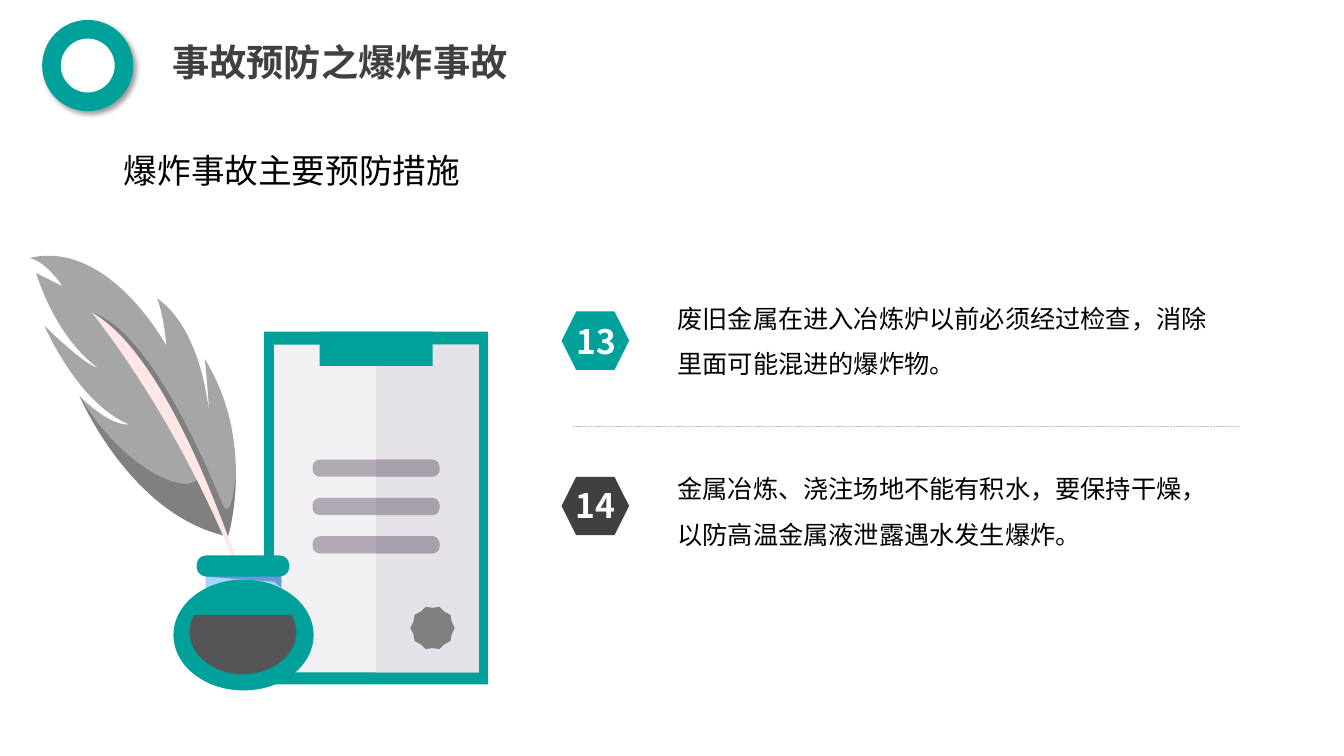
import math
import pptx
import pptx.util
import pptx.dml.color
import pptx.enum.dml
import pptx.enum.shapes
import pptx.enum.text
import pptx.oxml
import pptx.oxml.ns
from pptx.util import Inches

RGBColor = pptx.dml.color.RGBColor
MSO_SHAPE = pptx.enum.shapes.MSO_SHAPE
qn = pptx.oxml.ns.qn

TEAL = RGBColor(0x00, 0xA1, 0x9A)
WHITE = RGBColor(0xFF, 0xFF, 0xFF)
BLACK = RGBColor(0x00, 0x00, 0x00)
DARK = RGBColor(0x40, 0x40, 0x40)
GREY = RGBColor(0x80, 0x80, 0x80)
FEATHER = RGBColor(0xA6, 0xA6, 0xA6)
RULE = RGBColor(0xBF, 0xBF, 0xBF)
PAPER_LIGHT = RGBColor(0xF1, 0xF0, 0xF2)
PAPER_SHADE = RGBColor(0xE4, 0xE2, 0xE6)
BAR_LIGHT = RGBColor(0xB1, 0xAA, 0xB5)
BAR_SHADE = RGBColor(0xA7, 0xA0, 0xAC)
QUILL = RGBColor(0xFF, 0xE7, 0xE5)
GLASS = RGBColor(0xA3, 0xD5, 0xFF)
GLASS_SHADE = RGBColor(0x6B, 0x97, 0xDB)
INK = RGBColor(0x55, 0x54, 0x56)
CJK = "Noto Sans CJK SC"

FEATHER_BODY = [
    (2.26, 5.32), (2.26, 5.32, 2.55, 4.4, 2.03, 3.56),
    (2.05, 3.69, 2.08, 4.16, 2.08, 4.16), (2.08, 4.16, 2.03, 3.29, 1.56, 2.96),
    (1.63, 3.15, 1.65, 3.43, 1.65, 3.43), (1.65, 3.43, 1.08, 2.37, 0.29, 2.56),
    (0.46, 2.59, 0.62, 2.84, 0.62, 2.84), (0.36, 2.71),
    (0.36, 2.71, 0.53, 3.32, 0.97, 3.65), (0.82, 3.61, 0.44, 3.23, 0.44, 3.23),
    (0.44, 3.23, 0.77, 4, 1.28, 4.21), (1.08, 4.23, 0.79, 3.93, 0.79, 3.93),
    (0.79, 3.93, 1.3, 5.11, 2.26, 5.32),
]
FEATHER_EDGE = [
    (0.79, 3.93), (0.79, 3.93, 1.28, 5.08, 2.21, 5.31),
    (2.13, 5.12, 2.05, 4.92, 1.95, 4.76), (1.94, 4.78, 1.9, 4.8, 1.84, 4.8),
    (1.63, 4.8, 1.15, 4.54, 0.79, 3.93),
]
FEATHER_FOLD = [
    (0.91, 3.1), (1.49, 3.43, 1.97, 4.55, 2.26, 5.32),
    (2.28, 5.27, 2.33, 5.05, 2.34, 4.74), (2.33, 4.76, 2.31, 5.05, 2.25, 5.05),
    (2.24, 5.05, 2.22, 5.04, 2.21, 5.01), (2.13, 4.83, 1.53, 3.29, 0.91, 3.1),
]
QUILL_SHAFT = [
    (2.52, 6.1), (2.52, 6.1, 1.81, 3.61, 0.91, 3.1),
    (1.03, 3.25, 1.93, 4.39, 2.52, 6.1),
]
INK_POOL = [
    (1.93, 6.1), (1.9, 6.15, 1.88, 6.2, 1.88, 6.27),
    (1.88, 6.5, 2.12, 6.69, 2.41, 6.69), (2.7, 6.69, 2.94, 6.5, 2.94, 6.27),
    (2.94, 6.2, 2.92, 6.15, 2.89, 6.1),
]
NECK_SHADE = [(2.79, 5.69), (2.04, 5.72), (2.41, 5.75), (2.72, 5.77), (2.79, 5.83)]

MEASURES = [
    ("13", TEAL, 5.57, 3.09, 3.13, 2.81,
     "废旧金属在进入冶炼炉以前必须经过检查，消除里面可能混进的爆炸物。"),
    ("14", DARK, 5.56, 4.73, 4.76, 4.5,
     "金属冶炼、浇注场地不能有积水，要保持干燥，以防高温金属液泄露遇水发生爆炸。"),
]


def paint(s, color):
    s.shadow.inherit = False
    s.fill.solid()
    s.fill.fore_color.rgb = color
    s.line.fill.background()
    return s


def add_preset(shapes, kind, x, y, w, h, color):
    return paint(shapes.add_shape(kind, Inches(x), Inches(y), Inches(w), Inches(h)), color)


def add_outline(shapes, x, y, w, h, color, *contours):
    builder = shapes.build_freeform(Inches(x), Inches(y))
    builder.add_line_segments([(Inches(x + w), Inches(y + h))], close=False)
    s = builder.convert_to_shape()
    outline = next(s._element.iter(qn("a:path")))
    for child in list(outline):
        outline.remove(child)

    def add_step(tag, numbers=()):
        step = outline.makeelement(qn(tag))
        outline.append(step)
        for px, py in zip(numbers[::2], numbers[1::2]):
            step.append(step.makeelement(qn("a:pt"), {
                "x": str(int(Inches(px - x))), "y": str(int(Inches(py - y)))}))

    for start, *segments in contours:
        add_step("a:moveTo", start)
        for seg in segments:
            add_step("a:lnTo" if len(seg) == 2 else "a:cubicBezTo", seg)
        add_step("a:close")
    return paint(s, color)


def add_text(shapes, text, x, y, w, h, size, color, font=CJK, bold=False,
             align=None, spacing=None):
    tf = shapes.add_textbox(Inches(x), Inches(y), Inches(w), Inches(h)).text_frame
    tf.word_wrap = True
    tf.auto_size = pptx.enum.text.MSO_AUTO_SIZE.SHAPE_TO_FIT_TEXT
    tf.text = text
    p = tf.paragraphs[0]
    p.alignment = align
    p.line_spacing = spacing
    r = p.runs[0]
    r.font.size = pptx.util.Pt(size)
    r.font.bold = bold
    r.font.color.rgb = color
    r.font.name = font
    if font == CJK:
        rPr = r.font._element
        rPr.append(rPr.makeelement(qn("a:ea"), {"typeface": font}))


def add_ring(shapes):
    s = add_preset(shapes, MSO_SHAPE.OVAL, 0.51, 0.29, 0.72, 0.72, WHITE)
    s.line.color.rgb = TEAL
    s.line.width = pptx.util.Pt(13.25)
    effects = s._element.spPr.find(qn("a:effectLst"))
    effects.append(pptx.oxml.parse_xml(
        '<a:outerShdw xmlns:a="http://schemas.openxmlformats.org/drawingml/2006/main" '
        'blurRad="50800" dist="38100" dir="2700000" algn="tl" rotWithShape="0">'
        '<a:srgbClr val="000000"><a:alpha val="40000"/></a:srgbClr></a:outerShdw>'))


def add_clipboard(shapes):
    rect = MSO_SHAPE.RECTANGLE
    add_preset(shapes, rect, 2.62, 3.29, 2.22, 3.5, TEAL)
    add_preset(shapes, rect, 2.72, 3.42, 2.03, 3.25, PAPER_LIGHT)
    add_preset(shapes, rect, 3.73, 3.42, 1.02, 3.25, PAPER_SHADE)
    for i in range(3):
        top = 4.56 + 0.38 * i
        mid, bottom = top + 0.09, top + 0.17
        bar = add_preset(shapes, MSO_SHAPE.ROUNDED_RECTANGLE, 3.1, top, 1.26, 0.17, BAR_LIGHT)
        bar.adjustments[0] = 0.42
        add_outline(shapes, 3.73, top, 0.63, 0.17, BAR_SHADE, [
            (3.73, top), (4.29, top), (4.33, top, 4.36, top + 0.04, 4.36, mid),
            (4.36, mid + 0.05, 4.33, bottom, 4.29, bottom), (3.73, bottom)])
    add_preset(shapes, rect, 3.17, 3.29, 1.12, 0.34, TEAL)
    seal = []
    for i in range(20):
        radius = 0.2 if i % 2 else 0.22
        angle = math.radians(18 * i)
        seal.append((4.29 + radius * math.cos(angle), 6.23 + radius * math.sin(angle)))
    add_outline(shapes, 4.07, 6.02, 0.45, 0.41, GREY, seal)


def add_quill_and_inkwell(shapes):
    add_outline(shapes, 0.29, 2.37, 2.26, 2.95, FEATHER, FEATHER_BODY)
    add_outline(shapes, 0.79, 3.1, 1.55, 2.22, GREY, FEATHER_EDGE, FEATHER_FOLD)
    add_outline(shapes, 0.91, 3.1, 1.61, 3, QUILL, QUILL_SHAFT)
    add_preset(shapes, MSO_SHAPE.RECTANGLE, 2.04, 5.63, 0.75, 0.24, GLASS)
    add_preset(shapes, MSO_SHAPE.OVAL, 1.72, 5.75, 1.39, 1.1, TEAL)
    add_outline(shapes, 1.88, 6.1, 1.06, 0.6, INK, INK_POOL)
    add_outline(shapes, 2.04, 5.69, 0.75, 0.14, GLASS_SHADE, NECK_SHADE)
    lid = add_preset(shapes, MSO_SHAPE.ROUNDED_RECTANGLE, 1.95, 5.51, 0.92, 0.21, TEAL)
    lid.adjustments[0] = 0.45


def add_measure(shapes, number, color, number_x, hexagon_y, number_y, text_y, text):
    add_preset(shapes, MSO_SHAPE.HEXAGON, 5.57, hexagon_y, 0.67, 0.58, color)
    add_text(shapes, number, number_x, number_y, 0.69, 0.5, 24, WHITE, bold=True,
             align=pptx.enum.text.PP_ALIGN.CENTER)
    add_text(shapes, text, 6.62, text_y, 5.55, 1.01, 18, BLACK, spacing=1.5)


def add_divider(shapes):
    s = shapes.add_connector(pptx.enum.shapes.MSO_CONNECTOR.STRAIGHT,
                             Inches(5.68), Inches(4.23), Inches(12.29), Inches(4.23))
    s.line.color.rgb = RULE
    s.line.width = pptx.util.Pt(0.5)
    s.line.dash_style = pptx.enum.dml.MSO_LINE.SQUARE_DOT
    spPr = s._element.spPr
    spPr.append(spPr.makeelement(qn("a:effectLst")))


def main():
    prs = pptx.Presentation()
    prs.slide_width, prs.slide_height = Inches(13.33), Inches(7.5)
    shapes = prs.slides.add_slide(prs.slide_layouts[6]).shapes
    add_ring(shapes)
    add_text(shapes, "事故预防之爆炸事故", 1.61, 0.34, 4.87, 0.55, 26.6, DARK, "Arial", True)
    add_text(shapes, "爆炸事故主要预防措施", 1.13, 1.44, 6.22, 0.5, 24, BLACK, "Arial")
    illustration = shapes.add_group_shape().shapes
    add_clipboard(illustration)
    add_quill_and_inkwell(illustration)
    for measure in MEASURES:
        add_measure(shapes, *measure)
    add_divider(shapes)
    prs.save("out.pptx")


if __name__ == "__main__":
    main()
